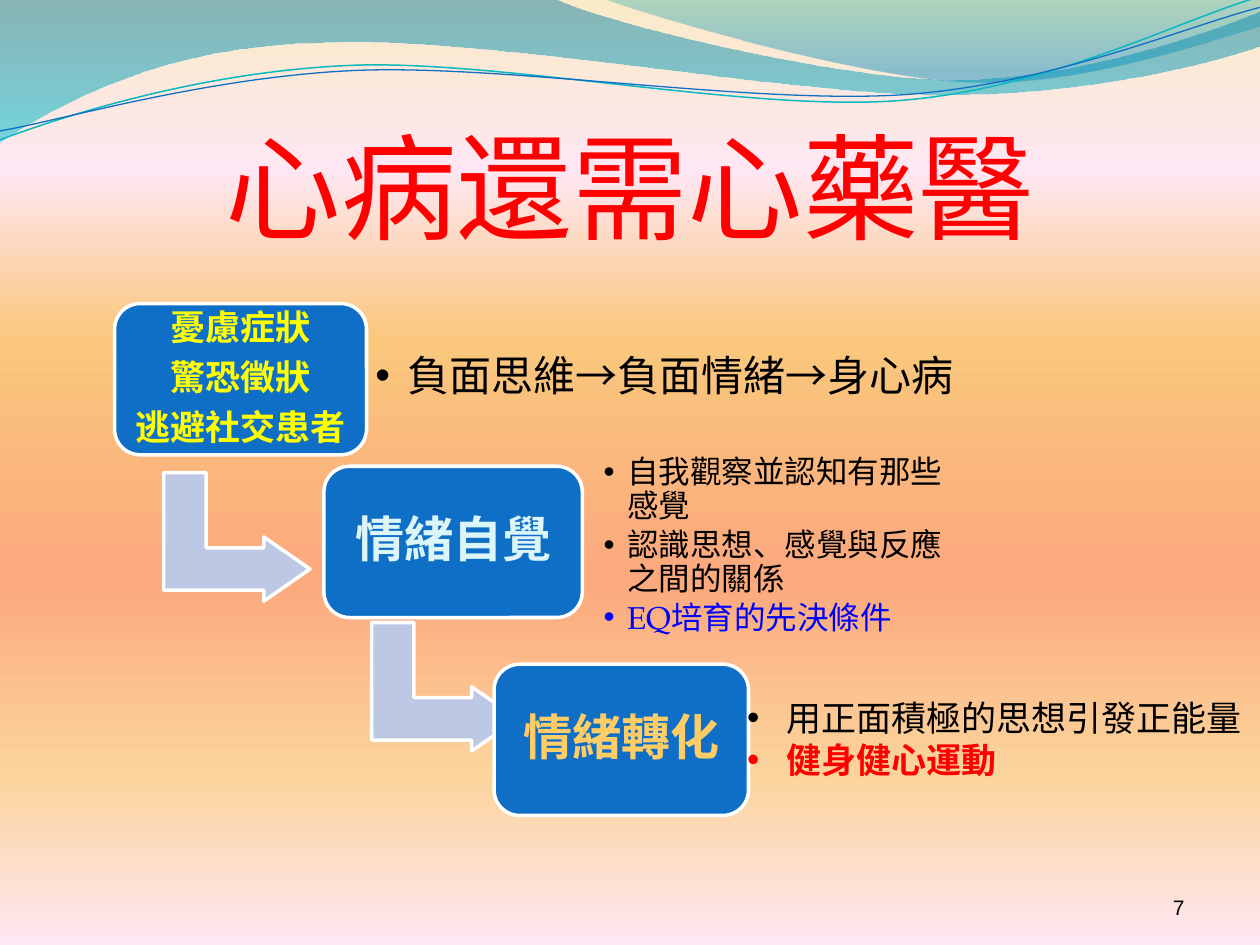
from lxml import etree
from pptx import Presentation
from pptx import util as u
from pptx.dml.color import RGBColor
from pptx.enum import shapes, text
from pptx.oxml import ns

SERIF, SANS, CJK = "TeX Gyre Pagella", "Arial", "Noto Sans CJK TC"
BLUE, WHITE, BLACK, RED = "0F6FC6", "FFFFFF", "000000", "FF0000"

# Content; all lengths in centimetres
BACKGROUND = [(0, "FBEAC7", 100), (18, "FEE7F2", 100), (36, "FAC77D", 100),
              (61, "FBA97D", 100), (82, "FBD49C", 100), (100, "FEE7F2", 100)]

# Wave outlines: start point, then lines (x, y) and curves (two handles, end)
FILLED_WAVES = [
    ([(0, -0.03), (11.18, -0.03),
      (12.09, 0.43, 16.87, 1.6, 19.25, 1.6),
      (21.67, 1.6, 24.33, 0.66, 25.4, 0.23), (25.43, 0.91),
      (24.97, 1.12, 22.1, 1.93, 18.95, 1.91),
      (15.8, 1.91, 9.7, 0.71, 6.53, 0.86),
      (3.28, 0.89, 1.17, 2.11, -0.03, 2.87), (0, -0.03)],
     [(0, "0074A1", 45), (100, "00C6CF", 55)]),
    ([(12.17, -0.03),
      (12.93, 0.28, 17.32, 1.57, 19.53, 1.65),
      (21.74, 1.75, 24.41, 0.81, 25.4, 0.53), (25.4, 0), (12.17, -0.03)],
     [(0, "00A1A9", 30), (80, "008BBF", 45)]),
]
LINE_WAVES = [
    ([(0, 2.82), (1.22, 2.36, 4.01, 1.45, 7.04, 1.32),
      (10.03, 1.19, 15.06, 2.26, 18.11, 2.03),
      (21.16, 1.8, 23.83, 0.38, 25.35, -0.05)], "0AB8BF", 0.85),
    ([(0, 2.64), (1.19, 2.44, 4.17, 1.55, 7.19, 1.42),
      (10.24, 1.3, 15.16, 2.11, 18.21, 1.91),
      (21.23, 1.7, 23.9, 0.53, 25.4, 0.15)], BLUE, 0.75),
]

# Steps: box left, top, width; text lines, size, colour, inset
STEPS = [
    (2.31, 6.12, 5.08, ["憂慮症狀", "驚恐徵狀", "逃避社交患者"], 20, "FFFF00", 0.2),
    (6.53, 9.4, 5.21, ["情緒自覺"], 28, "DBF5F9", 0.3),
    (9.96, 13.39, 5.13, ["情緒轉化"], 28, "FFCC66", 0.3),
]
STEP_HEIGHT = 3.05
ARROWS = [(3.48, 9.35), (7.67, 12.37)]
ARROW_SIZE = (2.59, 2.95)

# Notes: frame, lines with their colour and weight, text format
TIGHT = {"spacing": 0.9, "after": 15}
NOTES = [
    ((7.32, 6.76, 12.9, 1.7), [("負面思維→負面情緒→身心病", BLACK, False)],
     dict(TIGHT, size=24, indent=0.64, inset=(0.25, 0.25))),
    ((11.99, 9.78, 7.59, 2.46),
     [("自我觀察並認知有那些感覺", BLACK, False),
      ("認識思想、感覺與反應之間的關係", BLACK, False),
      ("EQ培育的先決條件", "0000FF", False)],
     dict(TIGHT, size=18, indent=0.48, inset=(0.18, 0.18))),
    ((14.81, 13.92, 10.59, 1.96),
     [("用正面積極的思想引發正能量", BLACK, False), ("健身健心運動", RED, True)],
     {"size": 20, "indent": 0.79, "font": SANS, "anchor": "TOP"}),
]


def cm(values):
    return [u.Cm(value) for value in values]


def color(value):
    return RGBColor.from_string(value)


def add_child(parent, tag, **attributes):
    return etree.SubElement(parent, ns.qn(tag), attributes)


def set_gradient(fill, element, stops):
    """Fill from top to bottom; stops are (percent, colour, opacity)."""
    fill.gradient()
    gradient = element.find(".//" + ns.qn("a:gradFill"))
    gradient.find(ns.qn("a:lin")).set("ang", "5400000")
    stop_list = gradient.find(ns.qn("a:gsLst"))
    for old_stop in list(stop_list):
        stop_list.remove(old_stop)
    for position, value, opacity in stops:
        stop = add_child(stop_list, "a:gs", pos=str(position * 1000))
        stop_color = add_child(stop, "a:srgbClr", val=value)
        if opacity < 100:
            add_child(stop_color, "a:alpha", val=str(opacity * 1000))


def write_text(shape, lines, size, font=SERIF, align="LEFT", anchor="MIDDLE",
               inset=(0.25, 0.13), spacing=None, after=None, indent=None):
    """Write (text, colour, bold) lines, one paragraph each."""
    frame = shape.text_frame
    frame.word_wrap = True
    frame.vertical_anchor = text.MSO_ANCHOR[anchor]
    frame.margin_left = frame.margin_right = u.Cm(inset[0])
    frame.margin_top = frame.margin_bottom = u.Cm(inset[1])
    for index, (words, value, bold) in enumerate(lines):
        paragraph = frame.add_paragraph() if index else frame.paragraphs[0]
        paragraph.alignment = text.PP_ALIGN[align]
        paragraph.line_spacing = spacing
        run = paragraph.add_run()
        run.text = words
        run.font.name, run.font.size, run.font.bold = font, u.Pt(size), bold
        run.font.color.rgb = color(value)
        add_child(run.font._element, "a:ea", typeface=CJK)
        properties = paragraph._p.get_or_add_pPr()
        if after:
            space = add_child(properties, "a:spcAft")
            add_child(space, "a:spcPct", val=str(after * 1000))
        if indent:
            properties.set("marL", str(u.Cm(indent)))
            properties.set("indent", str(-u.Cm(indent)))
            add_child(properties, "a:buFont", typeface=SANS)
            add_child(properties, "a:buChar", char="•")


def add_text(slide, frame, lines, **style):
    write_text(slide.shapes.add_textbox(*cm(frame)), lines, **style)


def add_wave(slide, segments, close):
    """Lay every point as a line, then merge each curve's three into a Bézier."""
    start, *rest = segments
    points = [cm(segment[i:i + 2]) for segment in rest for i in range(0, len(segment), 2)]
    builder = slide.shapes.build_freeform(*cm(start))
    builder.add_line_segments(points, close=close)
    shape = builder.convert_to_shape()
    shape.shadow.inherit = False
    lines = iter(list(shape.element.iter(ns.qn("a:lnTo"))))
    for segment in rest:
        line = next(lines)
        if len(segment) == 2:
            continue
        curve = etree.Element(ns.qn("a:cubicBezTo"))
        line.addprevious(curve)
        for piece in (line, next(lines), next(lines)):
            curve.append(piece[0])
            piece.getparent().remove(piece)
    return shape


def add_block(slide, kind, frame, fill, adjustments):
    shape = slide.shapes.add_shape(kind, *cm(frame))
    shape.shadow.inherit = False
    shape.fill.solid()
    shape.fill.fore_color.rgb = color(fill)
    shape.line.color.rgb = color(WHITE)
    shape.line.width = u.Pt(2)
    for index, value in enumerate(adjustments):
        shape.adjustments[index] = value
    return shape


def main():
    presentation = Presentation()
    presentation.slide_width, presentation.slide_height = cm((25.4, 19.05))
    slide = presentation.slides.add_slide(presentation.slide_layouts[6])
    set_gradient(slide.background.fill, slide.element, BACKGROUND)

    # Waves along the top
    for segments, stops in FILLED_WAVES:
        wave = add_wave(slide, segments, close=True)
        set_gradient(wave.fill, wave.element, stops)
        wave.line.fill.background()
    for segments, value, width in LINE_WAVES:
        wave = add_wave(slide, segments, close=False)
        wave.fill.background()
        wave.line.color.rgb = color(value)
        wave.line.width = u.Pt(width)

    add_text(slide, (1.27, 1.96, 22.86, 3.18), [("心病還需心藥醫", RED, False)],
             size=66, font=CJK, align="CENTER", anchor="BOTTOM", inset=(0, 0))

    # Staircase: arrows behind, then step boxes
    for corner in ARROWS:
        arrow = add_block(slide, shapes.MSO_SHAPE.BENT_UP_ARROW, corner + ARROW_SIZE,
                          "BDC8E5", (0.33, 0.25, 0.36))
        arrow.rotation = 90
    for left, top, width, lines, size, value, inset in STEPS:
        box = add_block(slide, shapes.MSO_SHAPE.ROUNDED_RECTANGLE,
                        (left, top, width, STEP_HEIGHT), BLUE, (0.17,))
        write_text(box, [(line, value, True) for line in lines], size, align="CENTER",
                   inset=(inset, inset), spacing=0.9, after=35)

    # Notes beside the steps, and the page number
    for frame, lines, style in NOTES:
        add_text(slide, frame, lines, **style)
    add_text(slide, (22.02, 17.65, 2.11, 1.02), [("7", BLACK, False)],
             size=12, font=SANS, align="RIGHT", anchor="BOTTOM")

    presentation.save("out.pptx")


if __name__ == "__main__":
    main()
